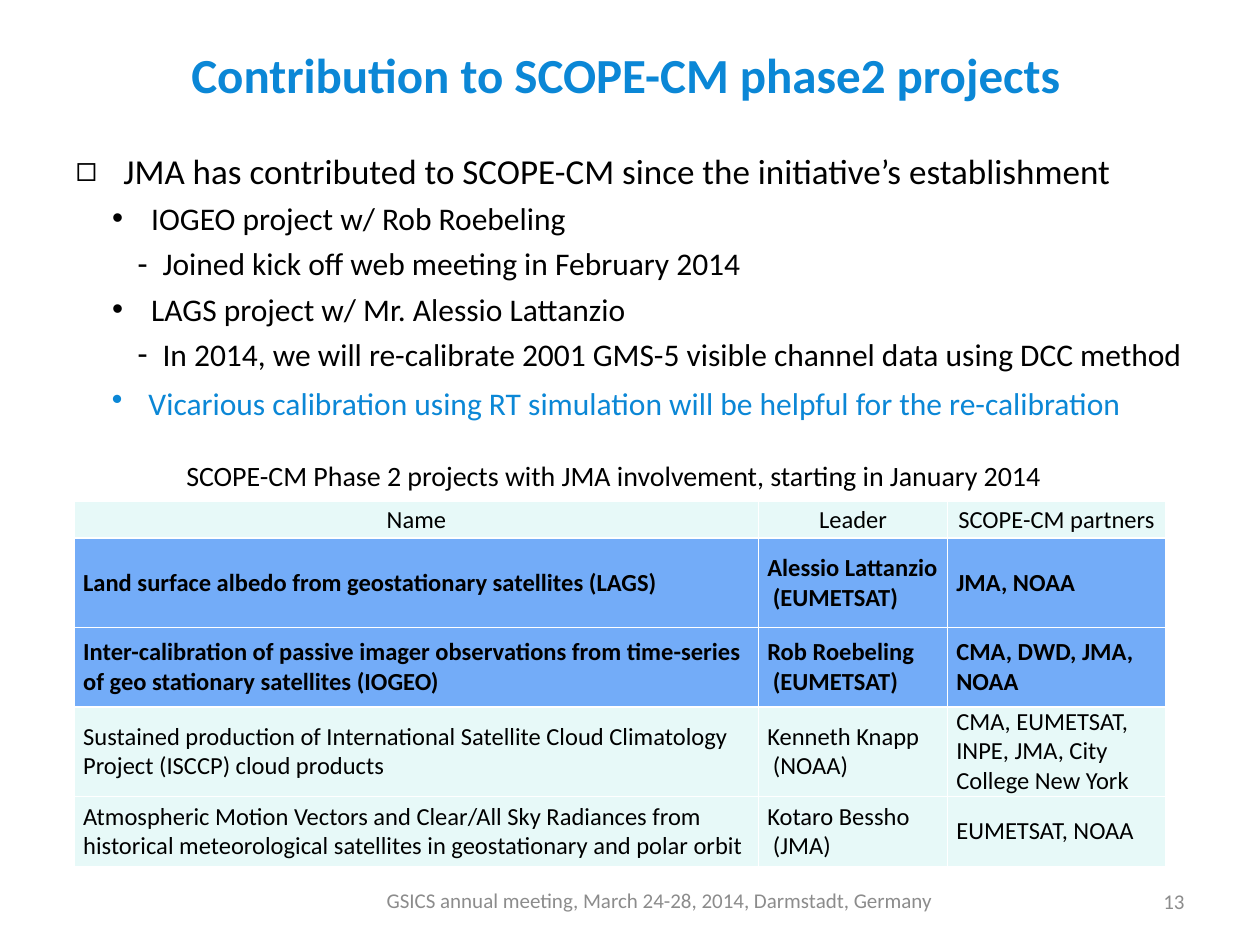
from lxml import etree
from pptx import Presentation
from pptx.dml.color import RGBColor
from pptx.enum import text
from pptx.oxml import ns
from pptx.util import Inches, Pt

HUES = {
    "blue": "0B87D6", "black": "000000", "gray": "8C8C8C",
    "white": "FFFFFF", "pale": "E7F9F8", "mark": "73ACF8",
}
LEFT, MID, RIGHT = text.PP_ALIGN.LEFT, text.PP_ALIGN.CENTER, text.PP_ALIGN.RIGHT
TOP, CENTER = text.MSO_ANCHOR.TOP, text.MSO_ANCHOR.MIDDLE


def color(name):
    return RGBColor.from_string(HUES[name])


class Deck:
    face = "Calibri"

    def __init__(self, slide):
        self.slide = slide

    def place(self, shape, box, anchor=TOP):
        shape.left, shape.top, shape.width, shape.height = map(Inches, box)
        frame = shape.text_frame
        frame.word_wrap = True
        frame.auto_size = text.MSO_AUTO_SIZE.NONE
        frame.vertical_anchor = anchor
        return frame

    def style(self, para, words, size, hue="black", align=LEFT, bold=False):
        para.text = words
        para.alignment = align
        font = para.font
        font.name, font.size, font.bold = self.face, Pt(size), bold
        font.color.rgb = color(hue)

    def bullet(self, para, mark, margin, hang):
        props = para._p.get_or_add_pPr()
        props.set("marL", str(Inches(margin)))
        props.set("indent", str(-Inches(hang)))
        etree.SubElement(props, ns.qn("a:buChar"), char=mark)
        para.line_spacing = 1.2
        para.space_before = Pt(0)

    def title(self, words, box):
        frame = self.place(self.slide.shapes.title, box)
        self.style(frame.paragraphs[0], words, 28, "blue", MID, True)

    def body(self, items, box):
        styles = [("◻", 0.38, 0.38, 20), ("•", 0.6, 0.31, 18), ("-", 0.69, 0.2, 18)]
        frame = self.place(self.slide.placeholders[1], box)
        for i, (level, words) in enumerate(items):
            para = frame.add_paragraph() if i else frame.paragraphs[0]
            mark, margin, hang, size = styles[level]
            para.level = level
            self.bullet(para, mark, margin, hang)
            self.style(para, words, size)

    def label(self, words, box, size, hue="black", align=LEFT, anchor=TOP, dot=False):
        shape = self.slide.shapes.add_textbox(*map(Inches, box))
        para = self.place(shape, box, anchor).paragraphs[0]
        if dot:
            self.bullet(para, "•", 0.29, 0.29)
        self.style(para, words, size, hue, align)

    def border(self, cell):
        props = cell._tc.get_or_add_tcPr()
        for i, side in enumerate(("lnL", "lnR", "lnT", "lnB")):
            line = etree.Element(ns.qn("a:" + side), w=str(Pt(1)))
            fill = etree.SubElement(line, ns.qn("a:solidFill"))
            etree.SubElement(fill, ns.qn("a:srgbClr"), val=HUES["white"])
            props.insert(i, line)

    def table(self, rows, box, widths, heights, marked):
        shape = self.slide.shapes.add_table(len(rows), len(widths), *map(Inches, box))
        grid = shape.table
        grid.first_row = grid.horz_banding = False
        for col, width in zip(grid.columns, widths):
            col.width = Inches(width)
        for r, (row, height) in enumerate(zip(rows, heights)):
            grid.rows[r].height = Inches(height)
            for c, words in enumerate(row):
                cell = grid.cell(r, c)
                cell.fill.solid()
                cell.fill.fore_color.rgb = color("mark" if r in marked else "pale")
                cell.vertical_anchor = CENTER
                cell.margin_left = cell.margin_right = Inches(0.07)
                cell.margin_top = cell.margin_bottom = 0
                self.border(cell)
                frame = cell.text_frame
                for i, line in enumerate(words.split("\n")):
                    para = frame.add_paragraph() if i else frame.paragraphs[0]
                    self.style(para, line, 14, align=LEFT if r else MID, bold=r in marked)


def main():
    prs = Presentation()
    prs.slide_width, prs.slide_height = Inches(10), Inches(7.5)
    deck = Deck(prs.slides.add_slide(prs.slide_layouts[1]))

    # Title and list
    deck.title("Contribution to SCOPE-CM phase2 projects", (0.12, 0.3, 9.69, 0.77))
    deck.body([
        (0, "JMA has contributed to SCOPE-CM since the initiative’s establishment"),
        (1, "IOGEO project w/ Rob Roebeling"),
        (2, "Joined kick off web meeting in February 2014"),
        (1, "LAGS project w/ Mr. Alessio Lattanzio"),
        (2, "In 2014, we will re-calibrate 2001 GMS-5 visible channel data using DCC method"),
    ], (0.5, 1.07, 9.3, 1.95))
    deck.label("Vicarious calibration using RT simulation will be helpful for the re-calibration",
               (0.79, 2.94, 8.7, 0.45), 18, "blue", dot=True)

    # Project table with caption
    deck.label("SCOPE-CM Phase 2 projects with JMA involvement, starting in January 2014",
               (1.38, 3.59, 7.08, 0.37), 16)
    deck.table([
        ("Name", "Leader", "SCOPE-CM partners"),
        ("Land surface albedo from geostationary satellites (LAGS)",
         "Alessio Lattanzio\n (EUMETSAT)", "JMA, NOAA"),
        ("Inter-calibration of passive imager observations from time-series "
         "of geo stationary satellites (IOGEO)",
         "Rob Roebeling\n (EUMETSAT)", "CMA, DWD, JMA, NOAA"),
        ("Sustained production of International Satellite Cloud Climatology "
         "Project (ISCCP) cloud products",
         "Kenneth Knapp\n (NOAA)", "CMA, EUMETSAT, INPE, JMA, City College New York"),
        ("Atmospheric Motion Vectors and Clear/All Sky Radiances from "
         "historical meteorological satellites in geostationary and polar orbit",
         "Kotaro Bessho\n (JMA)", "EUMETSAT, NOAA"),
    ], (0.59, 3.98, 8.66, 2.9), (5.43, 1.5, 1.73), (0.29, 0.71, 0.63, 0.71, 0.56), (1, 2))

    # Footer
    deck.label("GSICS annual meeting, March 24-28, 2014, Darmstadt, Germany",
               (2.56, 6.92, 5.35, 0.45), 12, "gray", MID, CENTER)
    deck.label("13", (7.17, 6.95, 2.33, 0.4), 12, "gray", RIGHT, CENTER)

    prs.save("out.pptx")


if __name__ == "__main__":
    main()
